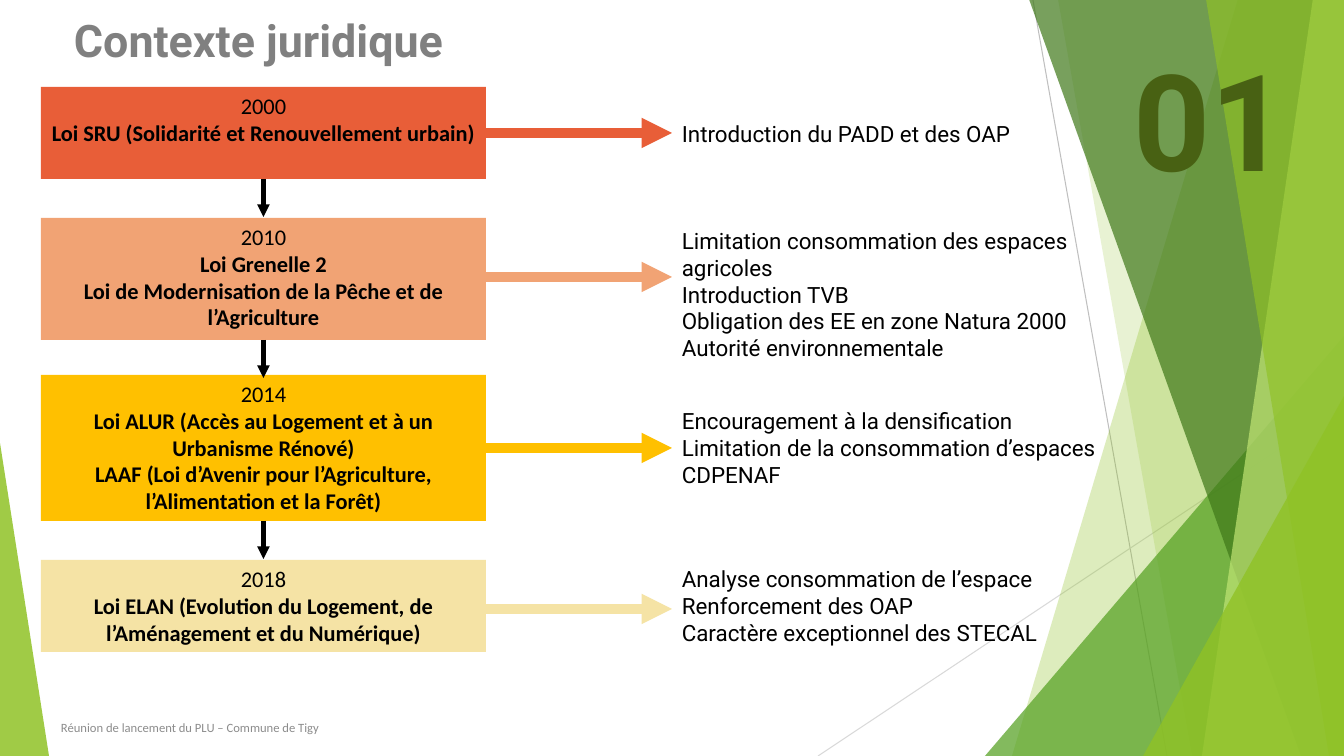
import pptx
import pptx.util
import pptx.dml.color
import pptx.enum.shapes
import pptx.enum.text
import pptx.oxml.ns
import lxml.etree

WIDE, HIGH = 1344, 756
SCALE = 914400 / 100.8

THEME = {
    "head": "Roboto", "body": "Calibri",
    "black": "000000", "title": "808080", "foot": "8C8C8C", "number": "486113",
    "lime": "90C226", "leaf": "54A021", "pine": "3F7819", "pale": "C0E474",
    "gray": "BFBFBF", "mist": "D9D9D9",
    "laws": ["E85E38", "F1A374", "FFC000", "F5E3A5"],
    "size": {"number": 96, "title": 32, "text": 16, "foot": 9},
    "line": {"thin": 0.75, "down": 3, "across": 7.25},
}

RAYS = [((1033, 0, 1167, 756), "gray"), ((1344, 406, 818, 756), "mist")]
FACETS = [
    ("band", (1238, 1012), "lime", 30),
    ("band", (1058, 1192), "lime", 20),
    ("wedge", (985, 336, 359, 420, 1), "leaf", 72),
    ("band", (1029, 1301), "pine", 70),
    ("band", (1313, 1202), "pale", 70),
    ("band", (1206, 1329), "lime", 65),
    ("wedge", (1143, 396, 201, 360, 1), "lime", 80),
    ("wedge", (0, 443, 49, 313, 0), "lime", 85),
]

LABELS = [
    ("01", (1107, 32, 208, 173), "number", "head", True),
    ("Contexte juridique", (64, 8, 948, 71), "title", "head", True),
    ("Réunion de lancement du PLU – Commune de Tigy", (51, 708, 695, 40), "foot", "body", False),
]

LAWS = [
    {"top": 87, "high": 92, "mid": 133,
     "law": ["2000", "Loi SRU (Solidarité et Renouvellement urbain)"],
     "note": (115, 37), "gains": ["Introduction du PADD et des OAP"]},
    {"top": 218, "high": 122, "mid": 277,
     "law": ["2010", "Loi Grenelle 2",
             "Loi de Modernisation de la Pêche et de l’Agriculture"],
     "note": (222, 119),
     "gains": ["Limitation consommation des espaces agricoles", "Introduction TVB",
               "Obligation des EE en zone Natura 2000", "Autorité environnementale"]},
    {"top": 375, "high": 146, "mid": 448,
     "law": ["2014", "Loi ALUR (Accès au Logement et à un Urbanisme Rénové)",
             "LAAF (Loi d’Avenir pour l’Agriculture, l’Alimentation et la Forêt)"],
     "note": (402, 92),
     "gains": ["Encouragement à la densification",
               "Limitation de la consommation d’espaces", "CDPENAF"]},
    {"top": 560, "high": 92, "mid": 609,
     "law": ["2018", "Loi ELAN (Evolution du Logement, de l’Aménagement et du Numérique)"],
     "note": (560, 92),
     "gains": ["Analyse consommation de l’espace", "Renforcement des OAP",
               "Caractère exceptionnel des STECAL"]},
]

BOX_X, BOX_W = 41, 445
NOTE_X, NOTE_W = 672, 501
DROP = 38

KIND = pptx.enum.shapes.MSO_SHAPE
ALIGN = pptx.enum.text.PP_ALIGN
ANCHOR = pptx.enum.text.MSO_ANCHOR


def px(*nums):
    return [pptx.util.Emu(round(num * SCALE)) for num in nums]


def color(code):
    return pptx.dml.color.RGBColor.from_string(code)


def add(root, tag, **attrs):
    return lxml.etree.SubElement(root, pptx.oxml.ns.qn(tag), attrs)


def paint(shape, code, alpha=100):
    shape.shadow.inherit = False
    shape.line.fill.background()
    shape.fill.solid()
    shape.fill.fore_color.rgb = color(code)
    if alpha < 100:
        tone = shape.fill._xPr.find(".//" + pptx.oxml.ns.qn("a:srgbClr"))
        add(tone, "a:alpha", val=str(alpha * 1000))


def write(shape, lines, size, font, code, align=ALIGN.LEFT, bold=lambda row: False):
    frame = shape.text_frame
    frame.word_wrap = True
    frame.vertical_anchor = ANCHOR.TOP
    frame.text = "\n".join(lines)
    for row, para in enumerate(frame.paragraphs):
        para.alignment = align
        for run in para.runs:
            run.font.size = pptx.util.Pt(THEME["size"][size])
            run.font.name = THEME[font]
            run.font.color.rgb = color(code)
            run.font.bold = bold(row)
    return frame


def link(slide, ends, code, weight, arrow=True):
    line = slide.shapes.add_connector(pptx.enum.shapes.MSO_CONNECTOR.STRAIGHT, *px(*ends))
    line.line.color.rgb = color(code)
    line.line.width = pptx.util.Pt(THEME["line"][weight])
    if arrow:
        add(line.line._get_or_add_ln(), "a:tailEnd", type="triangle")
    add(line._element.spPr, "a:effectLst")


def draw_decor(slide):
    for ends, tone in RAYS:
        link(slide, ends, THEME[tone], "thin", False)
    for kind, geo, tone, alpha in FACETS:
        if kind == "band":
            top, base = geo
            path = slide.shapes.build_freeform(top, -1, scale=SCALE)
            path.add_line_segments([(WIDE, -1), (WIDE, HIGH), (base, HIGH)], close=True)
            shape = path.convert_to_shape()
        else:
            shape = slide.shapes.add_shape(KIND.ISOSCELES_TRIANGLE, *px(*geo[:4]))
            shape.adjustments[0] = geo[4]
        paint(shape, THEME[tone], alpha)


def draw_labels(slide):
    for text, area, role, font, bold in LABELS:
        align = ALIGN.CENTER if role == "number" else ALIGN.LEFT
        box = slide.shapes.add_textbox(*px(*area))
        frame = write(box, [text], role, font, THEME[role], align, lambda row: bold)
        if role == "foot":
            frame.vertical_anchor = ANCHOR.MIDDLE


def draw_laws(slide):
    for item, tone in zip(LAWS, THEME["laws"]):
        area = px(BOX_X, item["top"], BOX_W, item["high"])
        box = slide.shapes.add_shape(KIND.RECTANGLE, *area)
        paint(box, tone)
        write(box, item["law"], "text", "body", THEME["black"], ALIGN.CENTER, lambda row: row > 0)
        top, high = item["note"]
        note = slide.shapes.add_textbox(*px(NOTE_X, top, NOTE_W, high))
        write(note, item["gains"], "text", "head", THEME["black"])
        link(slide, (BOX_X + BOX_W, item["mid"], NOTE_X, item["mid"]), tone, "across")
    axis = BOX_X + BOX_W / 2
    for item in LAWS[:-1]:
        base = item["top"] + item["high"]
        link(slide, (axis, base, axis, base + DROP), THEME["black"], "down")


def main():
    deck = pptx.Presentation()
    deck.slide_width, deck.slide_height = px(WIDE, HIGH)
    slide = deck.slides.add_slide(deck.slide_layouts[6])
    draw_decor(slide)
    draw_labels(slide)
    draw_laws(slide)
    deck.save("out.pptx")


if __name__ == "__main__":
    main()
